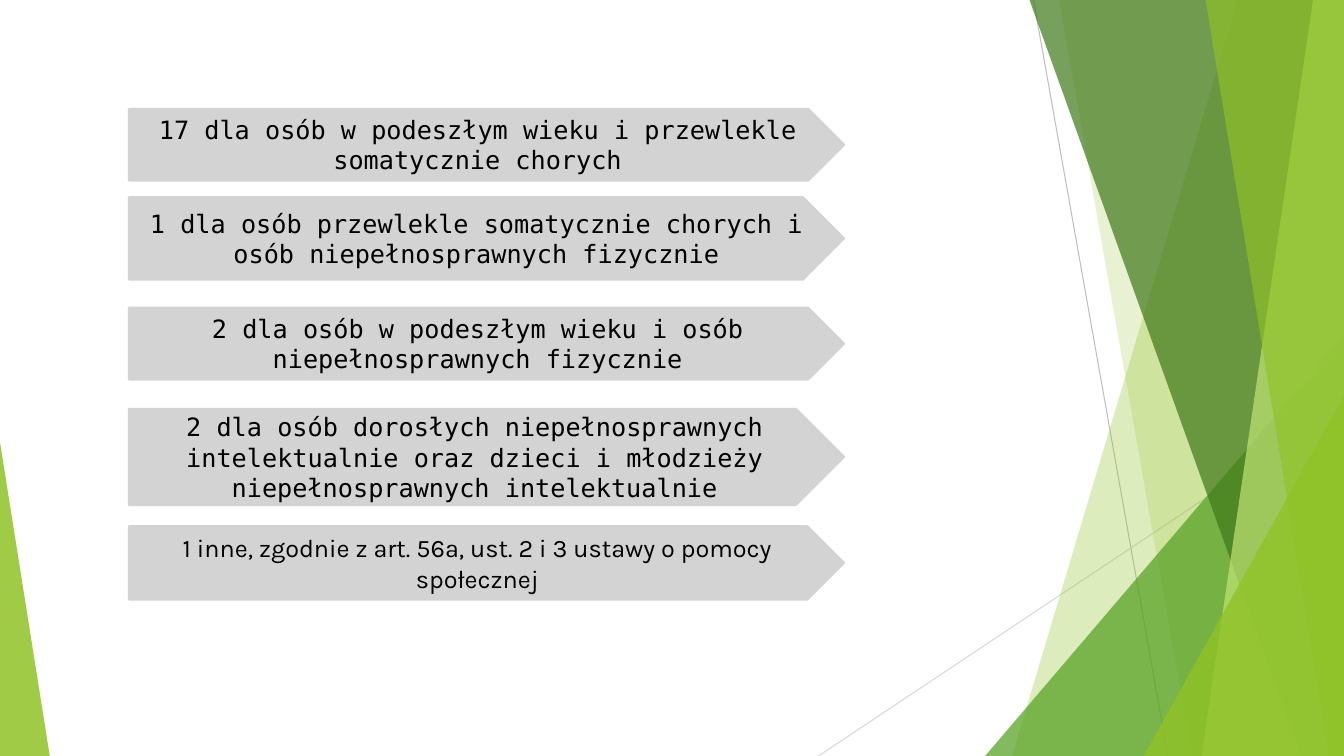
from lxml import etree
from pptx import Presentation, util as u
from pptx.dml.color import RGBColor
from pptx.enum import shapes, text
from pptx.oxml.ns import qn

WIDTH, HEIGHT = u.Inches(13.33), u.Inches(7.5)
MONO, SANS = "DejaVu Sans Mono", "Karla"
PLATE_LEFT, PLATE_WIDTH = 9.6, 53.2

# All lengths are percentages of the slide's width or height.
# Ray lines: start x, start y, end x, end y, colour
RAYS = [
    (76.9, 0, 86.9, 100, "BFBFBF"),
    (100, 53.7, 60.9, 100, "D9D9D9"),
]
# Bands reach the right edge: top x, bottom x, colour, opacity
BACK_BANDS = [
    (92.1, 75.3, "90C226", 30),
    (78.8, 88.7, "90C226", 20),
]
FRONT_BANDS = [
    (76.6, 96.8, "3F7819", 70),
    (97.7, 89.4, "C0E474", 70),
    (89.7, 98.9, "90C226", 65),
]
# Triangles stand on the bottom edge: left, top, width, apex, colour, opacity
BACK_TRIANGLE = (73.3, 44.4, 26.7, 1, "54A021", 72)
FRONT_TRIANGLES = [
    (85.1, 52.4, 14.9, 1, "90C226", 80),
    (0, 58.5, 3.7, 0, "90C226", 85),
]
# Arrow plates: top, height, font, wording
PLATES = [
    (14.4, 9.5, MONO, "17 dla osób w podeszłym wieku i przewlekle somatycznie chorych"),
    (26.1, 10.9, MONO, "1 dla osób przewlekle somatycznie chorych i osób "
                       "niepełnosprawnych fizycznie"),
    (40.7, 9.5, MONO, "2 dla osób w podeszłym wieku i osób niepełnosprawnych fizycznie"),
    (54.1, 12.7, MONO, "2 dla osób dorosłych niepełnosprawnych intelektualnie oraz "
                       "dzieci i młodzieży niepełnosprawnych intelektualnie"),
    (69.6, 9.7, SANS, "1 inne, zgodnie z art. 56a, ust. 2 i 3 ustawy o pomocy społecznej"),
]


def across(share):
    return round(WIDTH * share / 100)


def down(share):
    return round(HEIGHT * share / 100)


def paint(target, colour):
    """Colour a fill, or a line's fill, with a hex string."""
    target.solid()
    target.fore_color.rgb = RGBColor.from_string(colour)


def fill_clear(shape, colour, opacity):
    """Give a shape a see-through fill with neither line nor shadow."""
    shape.shadow.inherit = False
    paint(shape.fill, colour)
    shape.line.fill.background()
    tint = shape.fill._xPr.find(qn("a:solidFill"))[0]
    etree.SubElement(tint, qn("a:alpha"), val=str(opacity * 1000))


def add_ray(slide, x1, y1, x2, y2, colour):
    ray = slide.shapes.add_connector(
        shapes.MSO_CONNECTOR.STRAIGHT, across(x1), down(y1), across(x2), down(y2))
    paint(ray.line.fill, colour)
    ray.line.width = u.Pt(0.75)
    etree.SubElement(ray._element.spPr, qn("a:effectLst"))


def add_band(slide, top_x, bottom_x, colour, opacity):
    builder = slide.shapes.build_freeform(across(top_x), 0)
    builder.add_line_segments(
        [(WIDTH, 0), (WIDTH, HEIGHT), (across(bottom_x), HEIGHT)], close=True)
    fill_clear(builder.convert_to_shape(), colour, opacity)


def add_triangle(slide, left, top, width, apex, colour, opacity):
    triangle = slide.shapes.add_shape(
        shapes.MSO_SHAPE.ISOSCELES_TRIANGLE,
        across(left), down(top), across(width), down(100 - top))
    triangle.adjustments[0] = apex
    fill_clear(triangle, colour, opacity)


def add_plate(slide, top, height, font_name, wording):
    plate = slide.shapes.add_shape(
        shapes.MSO_SHAPE.PENTAGON,
        across(PLATE_LEFT), down(top), across(PLATE_WIDTH), down(height))
    plate.shadow.inherit = False
    paint(plate.fill, "D3D3D3")
    paint(plate.line.fill, "D3D3D3")
    plate.line.width = u.Pt(1.5)

    frame = plate.text_frame
    frame.word_wrap = True
    frame.vertical_anchor = text.MSO_ANCHOR.MIDDLE
    paragraph = frame.paragraphs[0]
    paragraph.alignment = text.PP_ALIGN.CENTER
    run = paragraph.add_run()
    run.text = wording
    for name, value in {"name": font_name, "size": u.Pt(18)}.items():
        setattr(run.font, name, value)
    paint(run.font.fill, "000000")


def main():
    presentation = Presentation()
    presentation.slide_width, presentation.slide_height = WIDTH, HEIGHT
    slide = presentation.slides.add_slide(presentation.slide_layouts[6])

    # Green facets, from back to front
    for ray in RAYS:
        add_ray(slide, *ray)
    for band in BACK_BANDS:
        add_band(slide, *band)
    add_triangle(slide, *BACK_TRIANGLE)
    for band in FRONT_BANDS:
        add_band(slide, *band)
    for triangle in FRONT_TRIANGLES:
        add_triangle(slide, *triangle)

    # Kinds of care homes
    for plate in PLATES:
        add_plate(slide, *plate)

    presentation.save("out.pptx")


if __name__ == "__main__":
    main()
